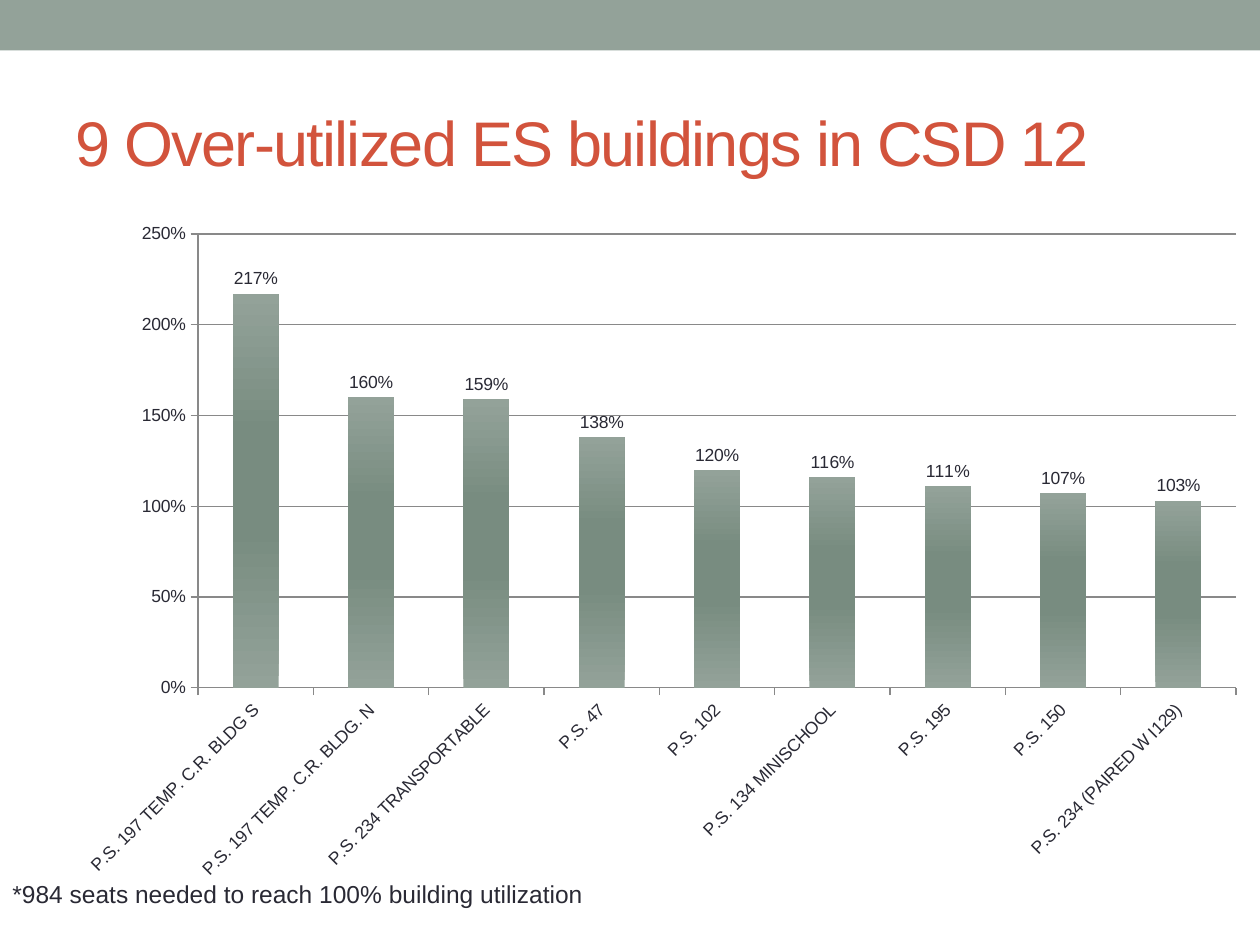
from copy import deepcopy

from pptx import Presentation
from pptx.chart.data import CategoryChartData
from pptx.dml.color import RGBColor
from pptx.enum.chart import XL_CHART_TYPE, XL_LABEL_POSITION, XL_TICK_MARK
from pptx.enum.shapes import MSO_SHAPE
from pptx.enum.text import MSO_ANCHOR, PP_ALIGN
from pptx.util import Inches, Pt

COLUMN = XL_CHART_TYPE.COLUMN_CLUSTERED
OUTSIDE = XL_TICK_MARK.OUTSIDE
FONT = "Arial"
COLORS = {"sage": "93A299", "moss": "788C80", "title": "D2533C",
          "text": "292934", "line": "898989"}

TITLE = "9 Over-utilized ES buildings in CSD 12"
FOOTNOTE = "*984 seats needed to reach 100% building utilization"
UTILIZATION = [
    ("P.S. 197 TEMP. C.R. BLDG S", 2.17),
    ("P.S. 197 TEMP. C.R. BLDG. N", 1.60),
    ("P.S. 234 TRANSPORTABLE", 1.59),
    ("P.S. 47", 1.38),
    ("P.S. 102", 1.20),
    ("P.S. 134 MINISCHOOL", 1.16),
    ("P.S. 195", 1.11),
    ("P.S. 150", 1.07),
    ("P.S. 234 (PAIRED W I129)", 1.03),
]


def color(name):
    return RGBColor.from_string(COLORS[name])


def set_font(font, size, name):
    font.name = FONT
    font.size = Pt(size)
    font.color.rgb = color(name)


def box(*lengths):
    return [Inches(length) for length in lengths]


deck = Presentation()
deck.slide_width, deck.slide_height = box(10, 7.5)
page = deck.slides.add_slide(deck.slide_layouts[5])

# Top band
band = page.shapes.add_shape(MSO_SHAPE.RECTANGLE, *box(0, 0, 10, 0.4))
band.shadow.inherit = False
band.fill.solid()
band.fill.fore_color.rgb = color("sage")
band.line.fill.background()

# Title
title = page.shapes.title
title.left, title.top, title.width, title.height = box(0.5, 0.58, 9, 1.08)
title.text_frame.text = TITLE
title.text_frame.vertical_anchor = MSO_ANCHOR.MIDDLE
para = title.text_frame.paragraphs[0]
para.alignment = PP_ALIGN.LEFT
set_font(para.font, 36, "title")
para.runs[0].font._element.set("spc", "-100")

# Footnote
note = page.shapes.add_textbox(*box(0, 6.93, 10, 0.34))
note.text_frame.word_wrap = True
note.text_frame.text = FOOTNOTE
set_font(note.text_frame.paragraphs[0].font, 14, "text")

# Utilization chart
data = CategoryChartData(number_format="0%")
data.categories = [school for school, share in UTILIZATION]
data.add_series("Series 1", [share for school, share in UTILIZATION])
chart = page.shapes.add_chart(COLUMN, *box(0.5, 1.67, 9.5, 5.42), data).chart
chart.has_legend = False
chart.has_title = False
set_font(chart.font, 10, "text")

# Axes
for axis in (chart.category_axis, chart.value_axis):
    axis.major_tick_mark = OUTSIDE
    axis.minor_tick_mark = XL_TICK_MARK.NONE
    axis.format.line.color.rgb = color("line")
    axis.format.line.width = Pt(0.75)
chart.category_axis.tick_labels.font.size = Pt(10)
chart.category_axis._element.txPr.bodyPr.set("rot", "-2700000")
values = chart.value_axis
values.minimum_scale, values.maximum_scale, values.major_unit = 0, 2.5, 0.5
values.tick_labels.number_format = "0%"
values.tick_labels.number_format_is_linked = False
values.major_gridlines.format.line.color.rgb = color("line")
values.major_gridlines.format.line.width = Pt(0.75)

# Columns, shaded darker in the middle
plot = chart.plots[0]
plot.gap_width = 150
plot.vary_by_categories = False
fill = plot.series[0].format.fill
fill.gradient()
fill.gradient_angle = 90
first, last = fill.gradient_stops
first.color.rgb = last.color.rgb = color("sage")
first.position, last.position = 0, 1
for position in (0.4, 0.65):
    middle = deepcopy(first._gs)
    last._gs.addprevious(middle)
for stop, position in zip(list(fill.gradient_stops)[1:3], (0.4, 0.65)):
    stop.color.rgb = color("moss")
    stop.position = position

# Value labels
plot.has_data_labels = True
labels = plot.data_labels
labels.show_value = True
labels.number_format = "0%"
labels.number_format_is_linked = False
labels.position = XL_LABEL_POSITION.OUTSIDE_END
set_font(labels.font, 10, "text")

deck.save("out.pptx")
